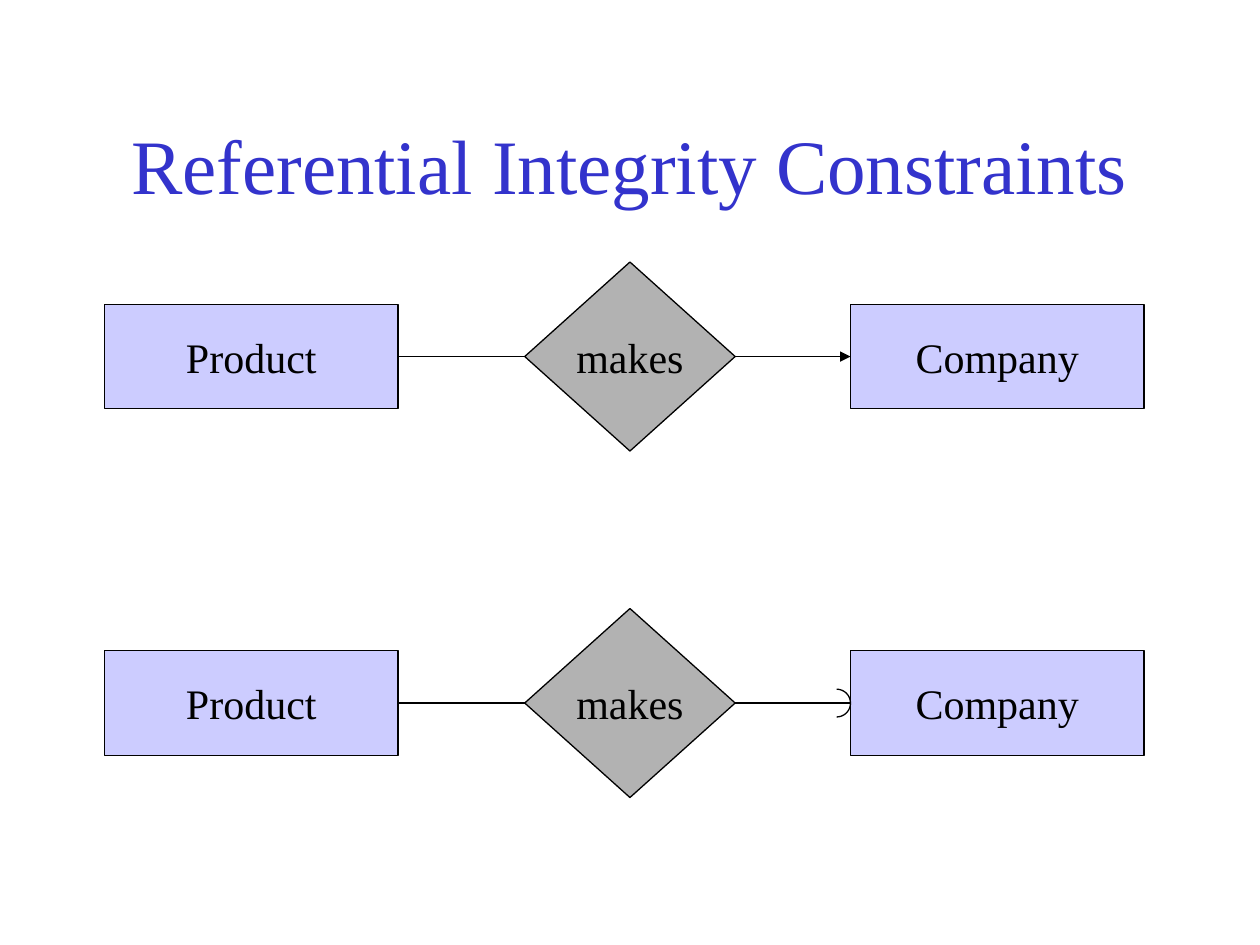
from math import cos, pi, sin

from lxml.etree import SubElement
from pptx import Presentation
from pptx.dml.color import RGBColor
from pptx.enum.shapes import MSO_CONNECTOR, MSO_SHAPE
from pptx.enum.text import MSO_ANCHOR, PP_ALIGN
from pptx.oxml.ns import qn
from pptx.util import Inches, Pt

BLACK = RGBColor(0x00, 0x00, 0x00)
TITLE_BLUE = RGBColor(0x33, 0x33, 0xCC)
ENTITY_LILAC = RGBColor(0xCC, 0xCC, 0xFF)
RELATION_GREY = RGBColor(0xB2, 0xB2, 0xB2)
FONT = "Times New Roman"
LINE_WIDTH = Pt(0.75)


def write_text(shape, text, size, color, wrap):
    frame = shape.text_frame
    frame.word_wrap = wrap
    frame.vertical_anchor = MSO_ANCHOR.MIDDLE
    para = frame.paragraphs[0]
    para.alignment = PP_ALIGN.CENTER
    span = para.add_run()
    span.text = text
    span.font.name = FONT
    span.font.size = Pt(size)
    span.font.color.rgb = color


def add_title(page, left, top, width, height):
    box = page.shapes.add_textbox(Inches(left), Inches(top), Inches(width), Inches(height))
    write_text(box, "Referential Integrity Constraints", 44, TITLE_BLUE, True)


def add_outline(shape):
    shape.line.color.rgb = BLACK
    shape.line.width = LINE_WIDTH


def add_node(page, kind, text, fill, left, middle, width, height):
    node = page.shapes.add_shape(
        kind, Inches(left), Inches(middle - height / 2), Inches(width), Inches(height)
    )
    node.shadow.inherit = False
    node.fill.solid()
    node.fill.fore_color.rgb = fill
    add_outline(node)
    write_text(node, text, 24, BLACK, False)
    return node


def add_link(page, start, end):
    link = page.shapes.add_connector(MSO_CONNECTOR.STRAIGHT, 0, 0, 0, 0)
    link.begin_connect(start, 3)
    link.end_connect(end, 1)
    add_outline(link)
    SubElement(link._element.spPr, qn("a:effectLst"))
    return link


def add_round_end(page, right, middle):
    radius = 0.11
    steps = 24
    angles = [pi * step / steps - pi / 2 for step in range(steps + 1)]
    points = [
        (Inches(right - radius + radius * cos(angle)), Inches(middle + radius * sin(angle)))
        for angle in angles
    ]
    builder = page.shapes.build_freeform(*points[0])
    builder.add_line_segments(points[1:], close=False)
    arc = builder.convert_to_shape()
    arc.shadow.inherit = False
    arc.fill.background()
    add_outline(arc)


def add_relationship(page, left, middle, width, round_end):
    entity_width, relation_width = 2.33, 1.67
    company_left = left + width - entity_width
    relation_left = 5 - relation_width / 2
    company = add_node(page, MSO_SHAPE.RECTANGLE, "Company", ENTITY_LILAC,
                       company_left, middle, entity_width, 0.83)
    product = add_node(page, MSO_SHAPE.RECTANGLE, "Product", ENTITY_LILAC,
                       left, middle, entity_width, 0.83)
    makes = add_node(page, MSO_SHAPE.DIAMOND, "makes", RELATION_GREY,
                     relation_left, middle, relation_width, 1.5)
    add_link(page, product, makes)
    target = add_link(page, makes, company)
    if round_end:
        add_round_end(page, company_left, middle)
    else:
        SubElement(target.line._get_or_add_ln(), qn("a:tailEnd"), type="triangle")


def main():
    deck = Presentation()
    deck.slide_width = Inches(10)
    deck.slide_height = Inches(7.5)
    page = deck.slides.add_slide(deck.slide_layouts[6])
    add_title(page, 0.75, 0.67, 8.5, 1.25)
    for middle, round_end in ((2.83, False), (5.58, True)):
        add_relationship(page, 0.83, middle, 8.25, round_end)
    deck.save("out.pptx")


if __name__ == "__main__":
    main()
